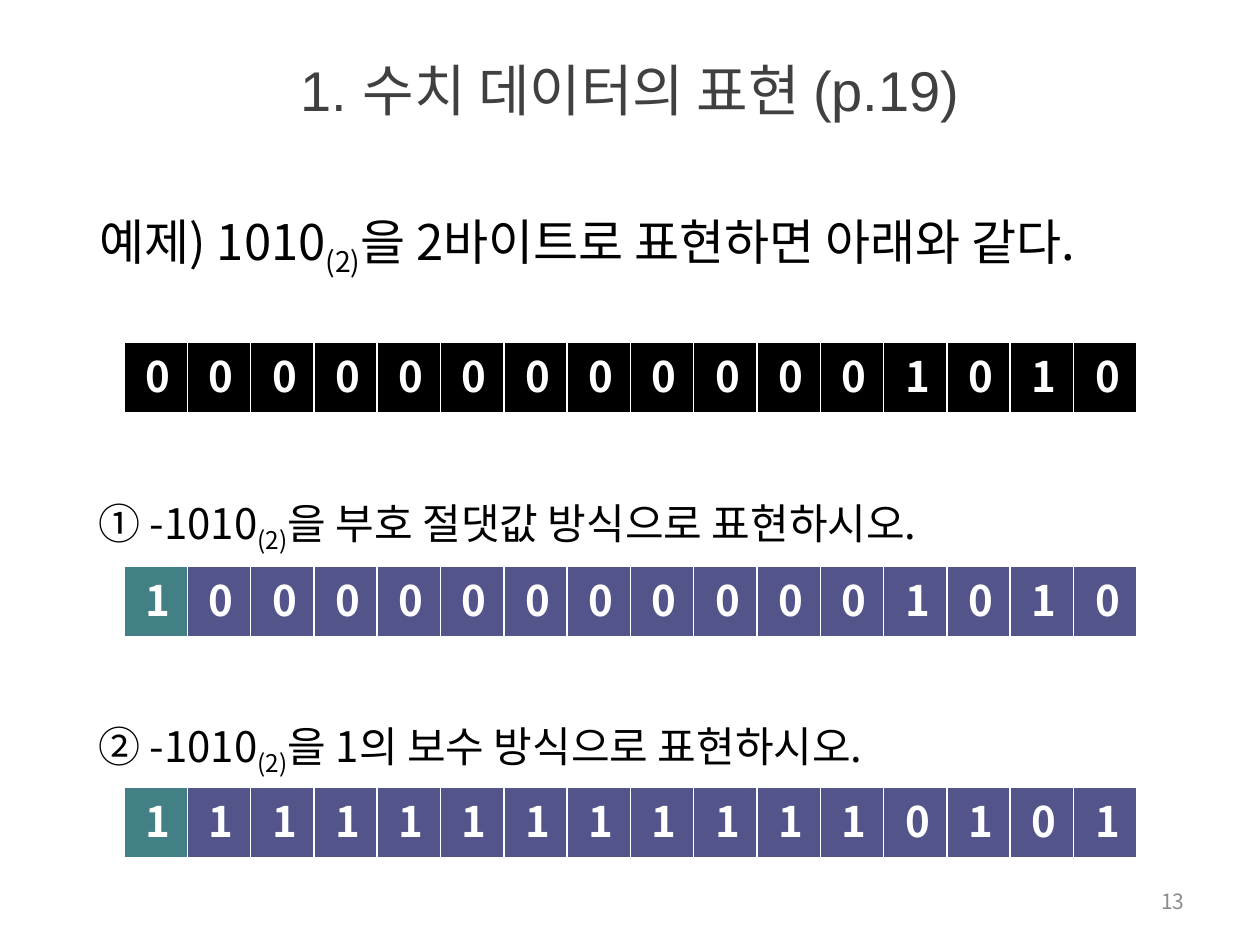
import pptx
import pptx.dml.color
import pptx.enum.text
import pptx.oxml.ns
import pptx.util
from dataclasses import dataclass
from lxml import etree

SCALE = 914400 / 126
ALIGN = pptx.enum.text.PP_ALIGN
ANCHOR = pptx.enum.text.MSO_ANCHOR
FIT = pptx.enum.text.MSO_AUTO_SIZE
qn = pptx.oxml.ns.qn


def emu(px):
    return pptx.util.Emu(round(px * SCALE))


@dataclass(frozen=True)
class Theme:
    ink: str = "000000"
    title: str = "404040"
    muted: str = "8C8C8C"
    paper: str = "FFFFFF"
    sign: str = "438086"
    bits: str = "53548A"
    head: str = "Arial"
    body: str = "Noto Sans CJK KR"
    title_size: int = 32
    lead_size: int = 28
    text_size: int = 24
    page_size: int = 12


class Deck:
    def __init__(self, theme):
        self.theme = theme
        self.prs = pptx.Presentation()
        self.prs.slide_width = emu(1260)
        self.prs.slide_height = emu(945)
        self.slide = self.prs.slides.add_slide(self.prs.slide_layouts[6])

    def text(self, box, runs, size, color, align=ALIGN.LEFT, font=None,
             bold=False, middle=False):
        """Add a text box; runs are (words, baseline in percent) pairs."""
        shape = self.slide.shapes.add_textbox(*map(emu, box))
        frame = shape.text_frame
        frame.word_wrap = True
        frame.auto_size = FIT.NONE if middle else FIT.SHAPE_TO_FIT_TEXT
        frame.vertical_anchor = ANCHOR.MIDDLE if middle else ANCHOR.TOP
        para = frame.paragraphs[0]
        para.alignment = align
        for words, base in runs:
            run = para.add_run()
            run.text = words
            run.font.size = pptx.util.Pt(size)
            run.font.bold = bold
            run.font.name = font or self.theme.body
            run.font.color.rgb = pptx.dml.color.RGBColor.from_string(color)
            props = run.font._element
            etree.SubElement(props, qn("a:ea"), typeface=self.theme.body)
            if base:
                props.set("baseline", str(base * 1000))

    def line(self, box, start, end, size):
        """Add a sentence that holds a binary number with its base below."""
        runs = [(start, 0), ("(2)", -25), (end, 0)]
        self.text(box, runs, size, self.theme.ink)

    def edge(self, cell):
        """Give a cell white borders, thicker at the bottom."""
        props = cell._tc.get_or_add_tcPr()
        for side, width in (("L", 1), ("R", 1), ("T", 1), ("B", 3)):
            line = etree.SubElement(props, qn("a:ln" + side),
                                    w=str(pptx.util.Pt(width)))
            fill = etree.SubElement(line, qn("a:solidFill"))
            etree.SubElement(fill, qn("a:srgbClr"), val=self.theme.paper)

    def word(self, top, bits, first, rest):
        """Add a row of cells with one bit on each."""
        left, width, height = 124, 1013, 72
        step = width / len(bits)
        table = self.slide.shapes.add_table(
            1, len(bits), emu(left), emu(top), emu(width), emu(height)).table
        table.first_row = table.horz_banding = False
        for i, bit in enumerate(bits):
            table.columns[i].width = emu(step)
            cell = table.cell(0, i)
            self.edge(cell)
            cell.fill.solid()
            cell.fill.fore_color.rgb = pptx.dml.color.RGBColor.from_string(
                rest if i else first)
            self.text((left + 9 + i * step, top + 2, 43, 63), [(bit, 0)],
                      self.theme.text_size, self.theme.paper, ALIGN.CENTER,
                      bold=True)


def main():
    theme = Theme()
    deck = Deck(theme)
    deck.text((63, 45, 1134, 89), [("1. 수치 데이터의 표현 (p.19)", 0)],
              theme.title_size, theme.title, ALIGN.CENTER, theme.head,
              middle=True)
    deck.text((903, 876, 294, 50), [("13", 0)], theme.page_size, theme.muted,
              ALIGN.RIGHT, middle=True)

    deck.line((87, 205, 1087, 72), "예제) 1010",
              "을 2바이트로 표현하면 아래와 같다.", theme.lead_size)
    deck.word(342, "0000000000001010", theme.ink, theme.ink)

    tasks = [
        (491, 566, "① -1010", "을 부호 절댓값 방식으로 표현하시오.",
         "1000000000001010"),
        (714, 787, "② -1010", "을 1의 보수 방식으로 표현하시오.",
         "1111111111110101"),
    ]
    for top, row, start, end, bits in tasks:
        deck.line((86, top, 1101, 63), start, end, theme.text_size)
        deck.word(row, bits, theme.sign, theme.bits)
    deck.prs.save("out.pptx")


if __name__ == "__main__":
    main()
